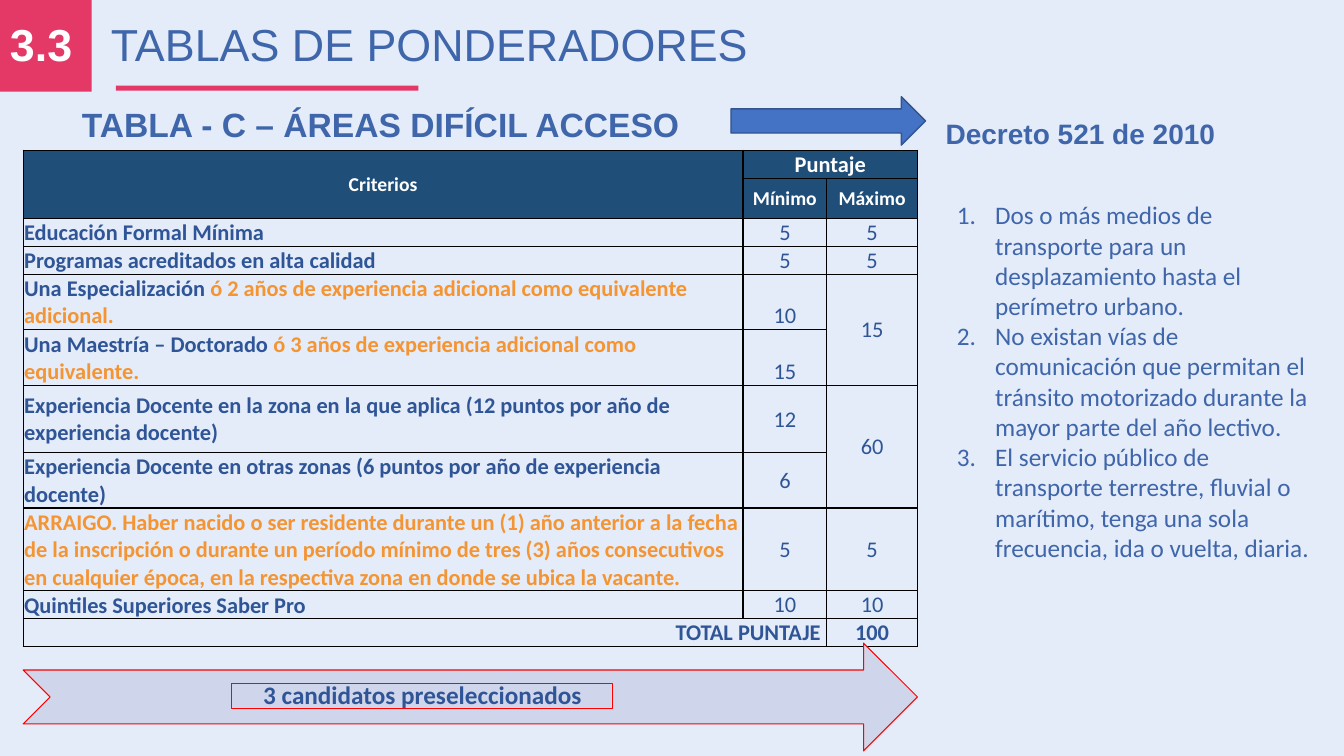
from pptx import Presentation
from pptx.dml.color import RGBColor
from pptx.enum.shapes import MSO_SHAPE
from pptx.enum.text import MSO_ANCHOR, MSO_AUTO_SIZE, PP_ALIGN
from pptx.oxml import parse_xml
from pptx.oxml.ns import nsdecls
from pptx.util import Inches, Pt

LEFT, CENTER, RIGHT = PP_ALIGN.LEFT, PP_ALIGN.CENTER, PP_ALIGN.RIGHT
TOP, MIDDLE, BOTTOM = MSO_ANCHOR.TOP, MSO_ANCHOR.MIDDLE, MSO_ANCHOR.BOTTOM
RECT, ARROW = MSO_SHAPE.RECTANGLE, MSO_SHAPE.RIGHT_ARROW
NOTCHED = MSO_SHAPE.NOTCHED_RIGHT_ARROW
FIXED = MSO_AUTO_SIZE.NONE

PINK, BLUE, NAVY, INK = "E43866", "3F65AA", "1F4E79", "2F5597"
ORANGE, WHITE, RED = "F59433", "FFFFFF", "FF0000"

COLS = [7.14, 0.83, 0.9]
ROWS = [0.27, 0.4, 0.27, 0.27, 0.55, 0.55, 0.67, 0.55, 0.82, 0.27, 0.27]
# Criterion, its orange part, minimum, maximum (None joins the cell above), anchor
SCORES = [
    ("Educación Formal Mínima", "", "5", "5", BOTTOM),
    ("Programas acreditados en alta calidad", "", "5", "5", BOTTOM),
    ("Una Especialización ",
     "ó 2 años de experiencia adicional como equivalente adicional.",
     "10", "15", BOTTOM),
    ("Una Maestría – Doctorado ",
     "ó 3 años de experiencia adicional como equivalente.",
     "15", None, BOTTOM),
    ("Experiencia Docente en la zona en la que aplica "
     "(12 puntos por año de experiencia docente)", "", "12", "60", MIDDLE),
    ("Experiencia Docente en otras zonas "
     "(6 puntos por año de experiencia docente)", "", "6", None, MIDDLE),
    ("", "ARRAIGO. Haber nacido o ser residente durante un (1) año anterior "
     "a la fecha de la inscripción o durante un período mínimo de tres (3) "
     "años consecutivos en cualquier época, en la respectiva zona en donde "
     "se ubica la vacante.", "5", "5", MIDDLE),
    ("Quintiles Superiores Saber Pro", "", "10", "10", BOTTOM),
]
RULES = [
    "Dos o más medios de transporte para un desplazamiento hasta el "
    "perímetro urbano.",
    "No existan vías de comunicación que permitan el tránsito motorizado "
    "durante la mayor parte del año lectivo.",
    "El servicio público de transporte terrestre, fluvial o marítimo, tenga "
    "una sola frecuencia, ida o vuelta, diaria.",
]


def color(code):
    return RGBColor.from_string(code)


def write(para, text, size=16, font="Calibri", ink=INK, bold=False, align=LEFT):
    para.alignment = align
    run = para.add_run()
    run.text = text
    run.font.size, run.font.name, run.font.bold = Pt(size), font, bold
    run.font.color.rgb = color(ink)


def place(shape, box):
    shape.left, shape.top, shape.width, shape.height = map(Inches, box)


def label(slide, box, text, wrap=True, **fmt):
    frame = slide.shapes.add_textbox(*map(Inches, box)).text_frame
    frame.word_wrap = wrap
    write(frame.paragraphs[0], text, font="Arial", **fmt)


def draw(shapes, kind, box, fill=None, line=None, width=1):
    shape = shapes.add_shape(kind, *map(Inches, box))
    shape.shadow.inherit = False
    if fill:
        shape.fill.solid()
        shape.fill.fore_color.rgb = color(fill)
    else:
        shape.fill.background()
    if line:
        shape.line.color.rgb = color(line)
        shape.line.width = Pt(width)
    else:
        shape.line.fill.background()
    return shape


def header(slide, box):
    left, top, width, height = box
    draw(slide.shapes, RECT, (left, top, height, height), PINK)
    label(slide, (left, top + 0.12, 0.95, 0.64), "3.3",
          size=32, ink=WHITE, bold=True)
    title = slide.shapes.title
    place(title, (left + 1, top + 0.12, width - 1, 0.64))
    frame = title.text_frame
    frame.auto_size, frame.vertical_anchor = FIXED, TOP
    write(frame.paragraphs[0], "TABLAS DE PONDERADORES",
          size=32, font="Arial", ink=BLUE)
    draw(slide.shapes, RECT, (left + 1.15, top + 0.85, 3, 0.05), PINK)


def border(cell):
    props = cell._tc.get_or_add_tcPr()
    for side in ("lnL", "lnR", "lnT", "lnB"):
        props.append(parse_xml(
            f'<a:{side} {nsdecls("a")} w="12700"><a:solidFill>'
            f'<a:srgbClr val="000000"/></a:solidFill></a:{side}>'))


def fill_cell(cell, *runs, anchor=MIDDLE, **fmt):
    """Write (text, ink) runs into a cell."""
    cell.vertical_anchor = anchor
    for text, ink in runs:
        if text:
            write(cell.text_frame.paragraphs[0], text, ink=ink, **fmt)


def score_table(slide, box):
    grid = slide.shapes.add_table(len(ROWS), len(COLS), *map(Inches, box)).table
    grid.first_row = grid.horz_banding = False
    for col, width in zip(grid.columns, COLS):
        col.width = Inches(width)
    for index, (row, height) in enumerate(zip(grid.rows, ROWS)):
        row.height = Inches(height)
        for cell in row.cells:
            border(cell)
            cell.margin_left = cell.margin_right = Inches(0.01)
            cell.margin_top, cell.margin_bottom = Inches(0.01), 0
            if index < 2:
                cell.fill.solid()
                cell.fill.fore_color.rgb = color(NAVY)
            else:
                cell.fill.background()

    grid.cell(0, 0).merge(grid.cell(1, 0))
    grid.cell(0, 1).merge(grid.cell(0, 2))
    for row, col, text, size in ((0, 0, "Criterios", 14), (0, 1, "Puntaje", 16),
                                 (1, 1, "Mínimo", 14), (1, 2, "Máximo", 14)):
        fill_cell(grid.cell(row, col), (text, WHITE),
                  size=size, bold=True, align=CENTER)

    for row, (name, extra, low, high, anchor) in enumerate(SCORES, 2):
        fill_cell(grid.cell(row, 0), (name, INK), (extra, ORANGE), bold=True)
        fill_cell(grid.cell(row, 1), (low, INK), anchor=anchor, align=CENTER)
        top = grid.cell(row, 2)
        if high is None:
            above = grid.cell(row - 1, 2)
            above.merge(top)
            above.vertical_anchor = MIDDLE
        else:
            fill_cell(top, (high, INK), anchor=anchor, align=CENTER)

    last = len(ROWS) - 1
    total = grid.cell(last, 0)
    total.merge(grid.cell(last, 1))
    total.margin_right = Inches(0.06)
    fill_cell(total, ("TOTAL PUNTAJE", INK), bold=True, align=RIGHT)
    fill_cell(grid.cell(last, 2), ("100", INK), anchor=BOTTOM,
              bold=True, align=CENTER)


def decree(slide, box):
    left, top, width, height = box
    label(slide, (left + 0.39, top, 2.9, 0.44), "Decreto 521 de 2010",
          wrap=False, size=20, ink=BLUE, bold=True)
    body = slide.placeholders[1]
    place(body, (left, top + 0.82, width, height - 0.82))
    frame = body.text_frame
    frame.auto_size, frame.vertical_anchor = FIXED, TOP
    for index, rule in enumerate(RULES):
        para = frame.add_paragraph() if index else frame.paragraphs[0]
        para.level = 1
        para.line_spacing, para.space_before = 1.0, Pt(0)
        write(para, rule, size=18, ink=BLUE)
        props = para._p.get_or_add_pPr()
        props.set("marL", str(Inches(0.88)))
        props.set("indent", str(Inches(-0.38)))
        props.append(parse_xml(
            f'<a:buFont {nsdecls("a")} typeface="+mj-lt"/>'))
        props.append(parse_xml(
            f'<a:buAutoNum {nsdecls("a")} type="arabicPeriod"/>'))


def outcome(slide, box):
    left, top = box[:2]
    shapes = slide.shapes.add_group_shape().shapes
    draw(shapes, NOTCHED, box, "CFD5EA", RED, 0.75)
    note = draw(shapes, RECT, (left + 2.07, top + 0.4, 3.78, 0.25),
                line=RED, width=0.75)
    frame = note.text_frame
    frame.word_wrap, frame.vertical_anchor = True, MIDDLE
    frame.margin_top = frame.margin_bottom = 0
    para = frame.paragraphs[0]
    para.line_spacing = 0.9
    write(para, "3 candidatos preseleccionados", size=18, bold=True, align=CENTER)


def main():
    deck = Presentation()
    deck.slide_width, deck.slide_height = Inches(13.33), Inches(7.5)
    slide = deck.slides.add_slide(deck.slide_layouts[1])
    slide.background.fill.solid()
    slide.background.fill.fore_color.rgb = color("E3ECF8")
    header(slide, (0, 0, 12.65, 0.91))
    label(slide, (0.38, 0.98, 6.79, 0.5), "TABLA - C – ÁREAS DIFÍCIL ACCESO",
          size=24, ink=BLUE, bold=True, align=CENTER)
    score_table(slide, (0.23, 1.49, sum(COLS), sum(ROWS)))
    decree(slide, (8.89, 1.11, 4.27, 4.62))
    draw(slide.shapes, ARROW, (7.25, 0.96, 1.93, 0.48), "4472C4", "325491")
    outcome(slide, (0.23, 6.38, 8.87, 1.07))
    deck.save("out.pptx")


if __name__ == "__main__":
    main()
